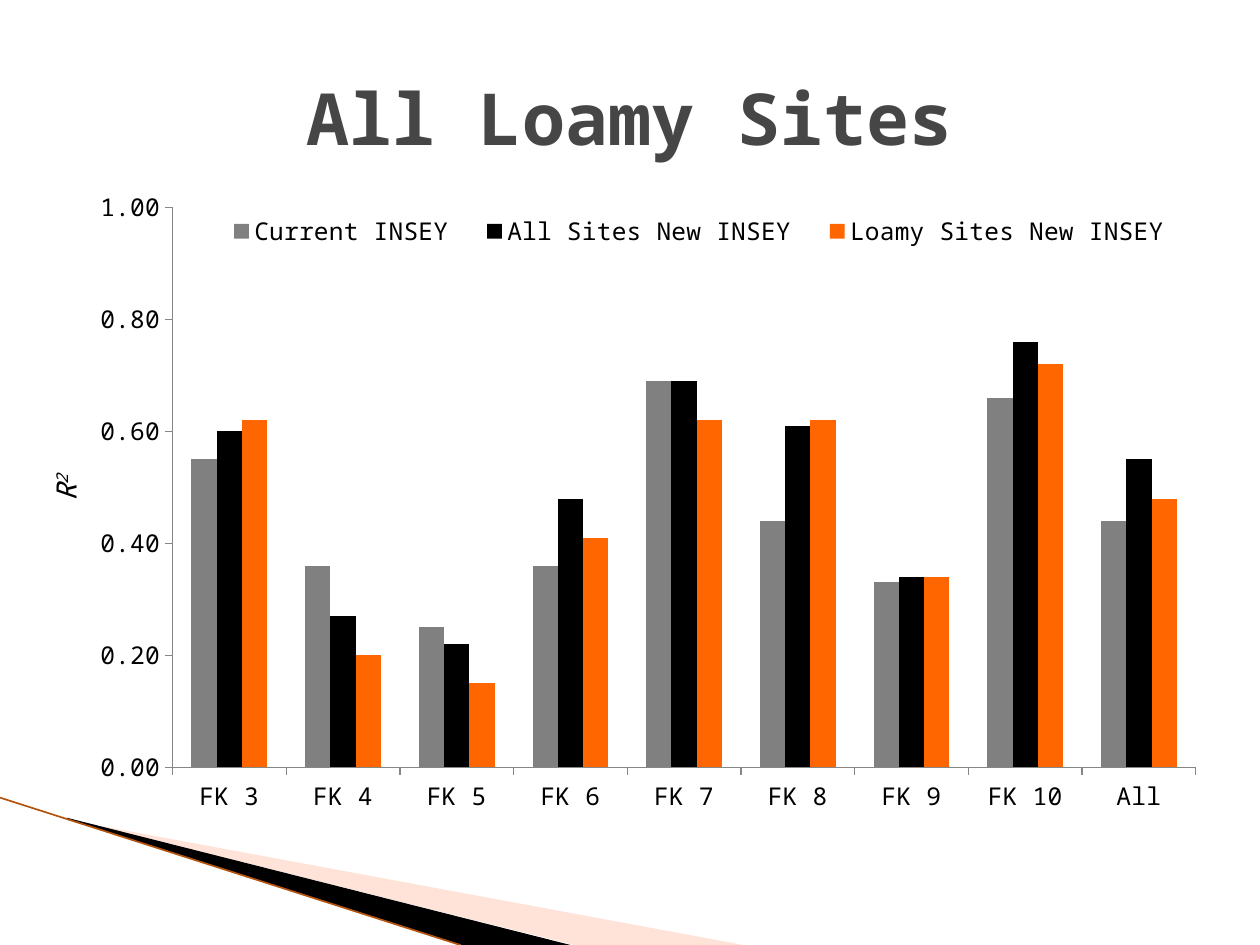
from dataclasses import dataclass

from lxml import etree
from pptx import Presentation
from pptx import util as u
from pptx.chart import data as chart_data
from pptx.dml.color import RGBColor
from pptx.enum import chart as ch
from pptx.enum import shapes, text
from pptx.oxml import ns

Pt = u.Pt
FONT = "Noto Sans Mono"
BLACK = RGBColor(0x00, 0x00, 0x00)
GRAY = RGBColor(0x80, 0x80, 0x80)
ORANGE = RGBColor(0xFF, 0x66, 0x00)
PEACH = RGBColor(0xFF, 0xBA, 0xA2)
RUST = RGBColor(0xB4, 0x54, 0x0C)
TITLE_GRAY = RGBColor(0x46, 0x46, 0x46)
AXIS_GRAY = RGBColor(0x86, 0x86, 0x86)


@dataclass(frozen=True)
class Wedge:
    points: tuple[tuple[float, float], ...]
    color: RGBColor
    opacity: int = 100


@dataclass(frozen=True)
class Series:
    name: str
    values: tuple[float, ...]
    color: RGBColor


WEDGES = (
    Wedge(((39.6, 468.7), (424.8, 540), (328, 540), (39.6, 468)), PEACH, 40),
    Wedge(((38.2, 467.3), (326, 540), (264, 540), (38.9, 468)), BLACK),
)
SITES = ("FK 3", "FK 4", "FK 5", "FK 6", "FK 7", "FK 8", "FK 9", "FK 10", "All")
SERIES = (
    Series("Current INSEY", (0.55, 0.36, 0.25, 0.36, 0.69, 0.44, 0.33, 0.66, 0.44), GRAY),
    Series("All Sites New INSEY", (0.6, 0.27, 0.22, 0.48, 0.69, 0.61, 0.34, 0.76, 0.55), BLACK),
    Series("Loamy Sites New INSEY", (0.62, 0.2, 0.15, 0.41, 0.62, 0.62, 0.34, 0.72, 0.48), ORANGE),
)


def style_font(font, size: float, color: RGBColor) -> None:
    font.name = FONT
    font.size = Pt(size)
    font.color.rgb = color


def draw_wedge(slide, wedge: Wedge) -> None:
    start, *rest = [(Pt(x), Pt(y)) for x, y in wedge.points]
    builder = slide.shapes.build_freeform(*start, scale=1.0)
    builder.add_line_segments(rest, close=True)
    shape = builder.convert_to_shape()
    shape.shadow.inherit = False
    shape.fill.solid()
    shape.fill.fore_color.rgb = wedge.color
    shape.line.fill.background()
    if wedge.opacity < 100:
        color = shape._element.spPr.find(".//" + ns.qn("a:srgbClr"))
        etree.SubElement(color, ns.qn("a:alpha"), val=str(wedge.opacity * 1000))


def draw_edge(slide) -> None:
    edge = slide.shapes.add_connector(
        shapes.MSO_CONNECTOR.STRAIGHT, 0, Pt(455.8), Pt(263), Pt(540)
    )
    edge.line.color.rgb = RUST
    edge.line.width = Pt(0.95)
    etree.SubElement(edge._element.spPr, ns.qn("a:effectLst"))


def manual_layout(x: float, y: float, w: float, h: float, inner: bool = False):
    layout = etree.Element(ns.qn("c:layout"))
    manual = etree.SubElement(layout, ns.qn("c:manualLayout"))
    target = {"layoutTarget": "inner"} if inner else {}
    settings = target | {"xMode": "edge", "yMode": "edge", "x": x, "y": y, "w": w, "h": h}
    for tag, value in settings.items():
        etree.SubElement(manual, ns.qn(f"c:{tag}"), val=str(value))
    return layout


def style_axis(axis) -> None:
    axis.has_major_gridlines = False
    axis.major_tick_mark = ch.XL_TICK_MARK.OUTSIDE
    axis.minor_tick_mark = ch.XL_TICK_MARK.NONE
    axis.format.line.color.rgb = AXIS_GRAY
    axis.format.line.width = Pt(0.75)
    style_font(axis.tick_labels.font, 14, BLACK)


def draw_chart(slide) -> None:
    data = chart_data.CategoryChartData(number_format="0.00")
    data.categories = SITES
    for series in SERIES:
        data.add_series(series.name, series.values)
    chart = slide.shapes.add_chart(
        ch.XL_CHART_TYPE.COLUMN_CLUSTERED, Pt(30), Pt(96), Pt(666), Pt(426), data
    ).chart
    chart.has_title = False
    style_font(chart.font, 18, BLACK)

    plot = chart.plots[0]
    plot.gap_width = 150
    plot.overlap = 0
    plot.vary_by_categories = False
    for drawn, series in zip(plot.series, SERIES):
        drawn.format.fill.solid()
        drawn.format.fill.fore_color.rgb = series.color
        drawn.invert_if_negative = False

    style_axis(chart.category_axis)
    values = chart.value_axis
    style_axis(values)
    values.minimum_scale, values.maximum_scale, values.major_unit = 0, 1, 0.2
    values.tick_labels.number_format = "#,##0.00"
    values.tick_labels.number_format_is_linked = False

    chart.has_legend = True
    legend = chart.legend
    legend.position = ch.XL_LEGEND_POSITION.RIGHT
    legend.include_in_layout = False
    style_font(legend.font, 14, BLACK)
    legend._element.find(ns.qn("c:legendPos")).addnext(manual_layout(0.13, 0.055, 0.85, 0.06))

    plot_area = chart._chartSpace.chart.plotArea
    for old in plot_area.findall(ns.qn("c:layout")):
        plot_area.remove(old)
    plot_area.insert(0, manual_layout(0.103, 0.053, 0.878, 0.751, inner=True))


def draw_title(slide) -> None:
    title = slide.shapes.title
    title.left, title.top, title.width, title.height = Pt(36), Pt(21.6), Pt(648), Pt(90)
    frame = title.text_frame
    frame.text = "All Loamy Sites"
    frame.vertical_anchor = text.MSO_ANCHOR.MIDDLE
    paragraph = frame.paragraphs[0]
    paragraph.alignment = text.PP_ALIGN.CENTER
    style_font(paragraph.font, 41, TITLE_GRAY)
    paragraph.font.bold = True


def draw_axis_label(slide) -> None:
    label = slide.shapes.add_textbox(Pt(-127.4), Pt(265.7), Pt(329.8), Pt(26.6))
    label.rotation = 270
    frame = label.text_frame
    frame.word_wrap = True
    frame.auto_size = text.MSO_AUTO_SIZE.SHAPE_TO_FIT_TEXT
    paragraph = frame.paragraphs[0]
    paragraph.alignment = text.PP_ALIGN.CENTER
    style_font(paragraph.font, 16, BLACK)
    paragraph.font.italic = True
    paragraph.add_run().text = "R"
    exponent = paragraph.add_run()
    exponent.text = "2"
    exponent._r.get_or_add_rPr().set("baseline", "30000")


def main() -> None:
    deck = Presentation()
    deck.slide_width, deck.slide_height = Pt(720), Pt(540)
    slide = deck.slides.add_slide(deck.slide_layouts.get_by_name("Title Only"))
    for wedge in WEDGES:
        draw_wedge(slide, wedge)
    draw_edge(slide)
    draw_chart(slide)
    draw_title(slide)
    draw_axis_label(slide)
    deck.save("out.pptx")


if __name__ == "__main__":
    main()
